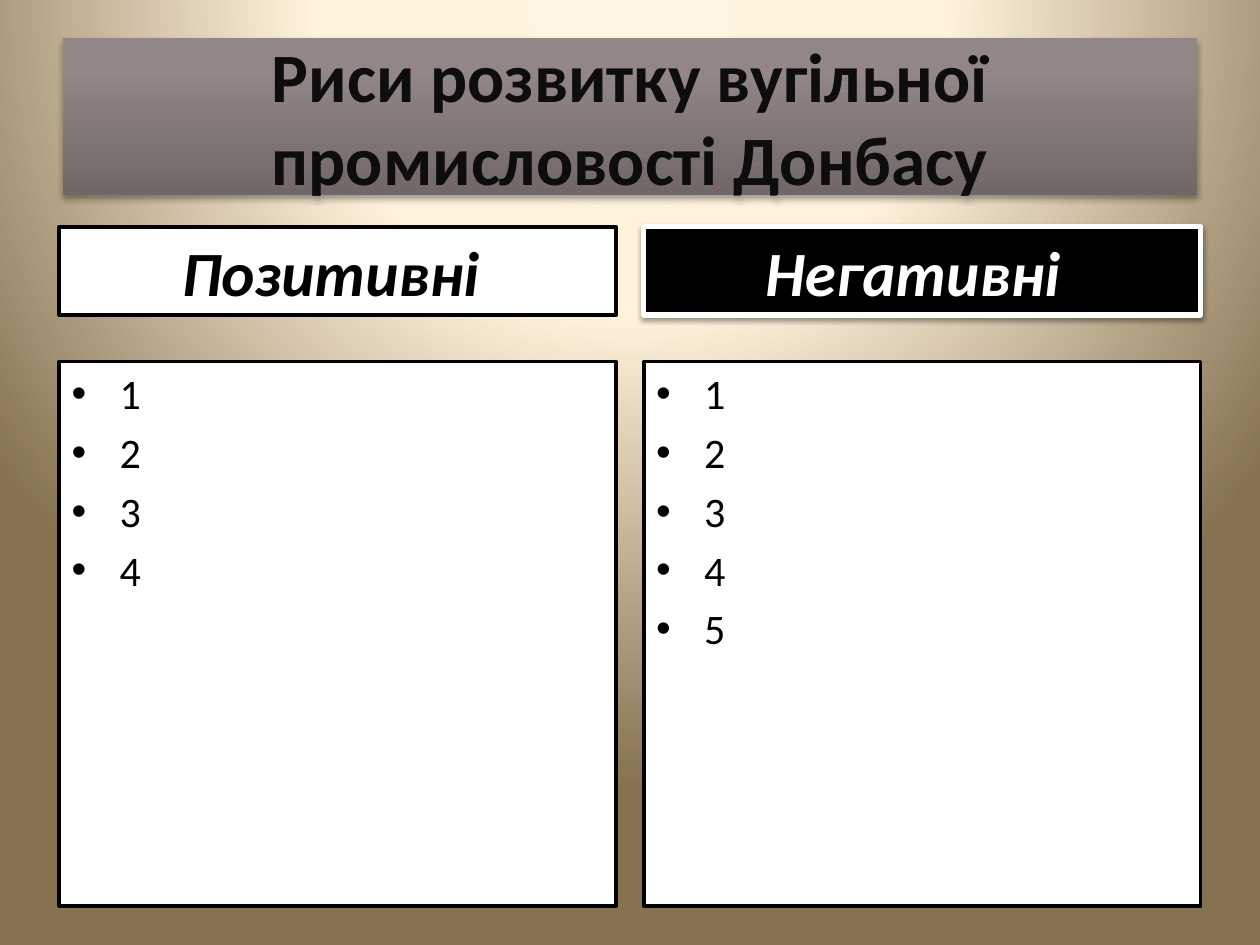
"""Builds a slide comparing positive and negative traits of the Donbas coal industry."""
import pptx
import pptx.dml.color
import pptx.enum.shapes
import pptx.enum.text
import pptx.oxml
import pptx.util

WIDTH, HEIGHT = 10, 7.5
NS = 'xmlns:a="http://schemas.openxmlformats.org/drawingml/2006/main"'
PNS = 'xmlns:p="http://schemas.openxmlformats.org/presentationml/2006/main"'
FONT = "Calibri"
BLACK, WHITE = "000000", "FFFFFF"

TITLE = "Риси розвитку вугільної промисловості Донбасу"
TITLE_STOPS = [(0, "716767"), (80, "938686"), (100, "948787")]
TITLE_SHADOW = (35, 3.1, 1.8)
BACKGROUND_STOPS = [(0, "FFF4E2"), (40, "FFF2DC"), (100, "847251")]
COLUMNS = [
    {"heading": [("Позитивні ", 36)], "fill": WHITE, "ink": BLACK, "border": 2,
     "shadow": None, "points": ["1", "2", "3", "4"]},
    {"heading": [("Негативні", 36), ("  ", 24)], "fill": BLACK, "ink": WHITE, "border": 3,
     "shadow": (38, 3.1, 1.6), "points": ["1", "2", "3", "4", "5"]},
]
COLUMN_WIDTH, GAP = 4.42, 0.22
LEFT = (WIDTH - 2 * COLUMN_WIDTH - GAP) / 2
HEADING_TOP, HEADING_HEIGHT = 1.8, 0.7
POINTS_TOP, POINTS_HEIGHT = 2.87, 4.32


def rgb(value):
    return pptx.dml.color.RGBColor.from_string(value)


def gradient(stops, direction):
    marks = "".join(f'<a:gs pos="{pos * 1000}"><a:srgbClr val="{color}"/></a:gs>'
                    for pos, color in stops)
    return f'<a:gradFill {NS} rotWithShape="1"><a:gsLst>{marks}</a:gsLst>{direction}</a:gradFill>'


def add_panel(slide, left, top, width, height, anchor, shadow=None):
    panel = slide.shapes.add_shape(pptx.enum.shapes.MSO_SHAPE.RECTANGLE,
                                   *map(pptx.util.Inches, (left, top, width, height)))
    panel.shadow.inherit = False
    if shadow:
        alpha, blur, distance = shadow
        panel._element.spPr.find(pptx.oxml.ns.qn("a:effectLst")).append(pptx.oxml.parse_xml(
            f'<a:outerShdw {NS} blurRad="{pptx.util.Pt(blur)}" dist="{pptx.util.Pt(distance)}" '
            f'dir="5400000" rotWithShape="0"><a:srgbClr val="{BLACK}">'
            f'<a:alpha val="{alpha * 1000}"/></a:srgbClr></a:outerShdw>'))
    panel.text_frame.word_wrap = True
    panel.text_frame.vertical_anchor = anchor
    return panel


def paint(panel, fill, line, weight):
    panel.fill.solid()
    panel.fill.fore_color.rgb = rgb(fill)
    panel.line.color.rgb = rgb(line)
    panel.line.width = pptx.util.Pt(weight)


def write(paragraph, runs, color, align, bold=False, italic=False):
    paragraph.alignment = align
    for text, size in runs:
        run = paragraph.add_run()
        run.text = text
        run.font.name = FONT
        run.font.size = pptx.util.Pt(size)
        run.font.bold, run.font.italic = bold, italic
        run.font.color.rgb = rgb(color)


def space_before(paragraph, bullet=False):
    props = paragraph._p.get_or_add_pPr()
    props.append(pptx.oxml.parse_xml(f'<a:spcBef {NS}><a:spcPct val="20000"/></a:spcBef>'))
    if bullet:
        indent = pptx.util.Inches(0.38)
        props.set("marL", str(indent))
        props.set("indent", str(-indent))
        props.append(pptx.oxml.parse_xml(f'<a:buFont {NS} typeface="Arial"/>'))
        props.append(pptx.oxml.parse_xml(f'<a:buChar {NS} char="•"/>'))


def add_title(slide):
    anchor = pptx.enum.text.MSO_ANCHOR.MIDDLE
    title = add_panel(slide, 0.5, 0.3, WIDTH - 1, 1.25, anchor, TITLE_SHADOW)
    title.line.fill.background()
    title._element.spPr.find(pptx.oxml.ns.qn("a:prstGeom")).addnext(pptx.oxml.parse_xml(
        gradient(TITLE_STOPS, '<a:lin ang="16200000" scaled="0"/>')))
    write(title.text_frame.paragraphs[0], [(TITLE, 39.6)], "0D0D0D",
          pptx.enum.text.PP_ALIGN.CENTER, bold=True)


def add_column(slide, index, column):
    left = LEFT + index * (COLUMN_WIDTH + GAP)
    heading = add_panel(slide, left, HEADING_TOP, COLUMN_WIDTH, HEADING_HEIGHT,
                        pptx.enum.text.MSO_ANCHOR.BOTTOM, column["shadow"])
    paint(heading, column["fill"], column["ink"], column["border"])
    paragraph = heading.text_frame.paragraphs[0]
    write(paragraph, column["heading"], column["ink"],
          pptx.enum.text.PP_ALIGN.CENTER, bold=True, italic=True)
    space_before(paragraph)

    points = add_panel(slide, left, POINTS_TOP, COLUMN_WIDTH, POINTS_HEIGHT,
                       pptx.enum.text.MSO_ANCHOR.TOP)
    paint(points, WHITE, BLACK, 2)
    points.text_frame.text = "\n".join(column["points"])
    for paragraph, point in zip(points.text_frame.paragraphs, column["points"]):
        paragraph.clear()
        write(paragraph, [(point, 24)], BLACK, pptx.enum.text.PP_ALIGN.LEFT)
        space_before(paragraph, bullet=True)


def main():
    deck = pptx.Presentation()
    deck.slide_width = pptx.util.Inches(WIDTH)
    deck.slide_height = pptx.util.Inches(HEIGHT)
    slide = deck.slides.add_slide(deck.slide_layouts[6])
    circle = ('<a:path path="circle">'
              '<a:fillToRect l="50000" t="-80000" r="50000" b="180000"/></a:path>')
    slide._element.cSld.insert(0, pptx.oxml.parse_xml(
        f'<p:bg {PNS}><p:bgPr>{gradient(BACKGROUND_STOPS, circle)}'
        f'<a:effectLst {NS}/></p:bgPr></p:bg>'))
    add_title(slide)
    for index, column in enumerate(COLUMNS):
        add_column(slide, index, column)
    deck.save("out.pptx")


if __name__ == "__main__":
    main()
